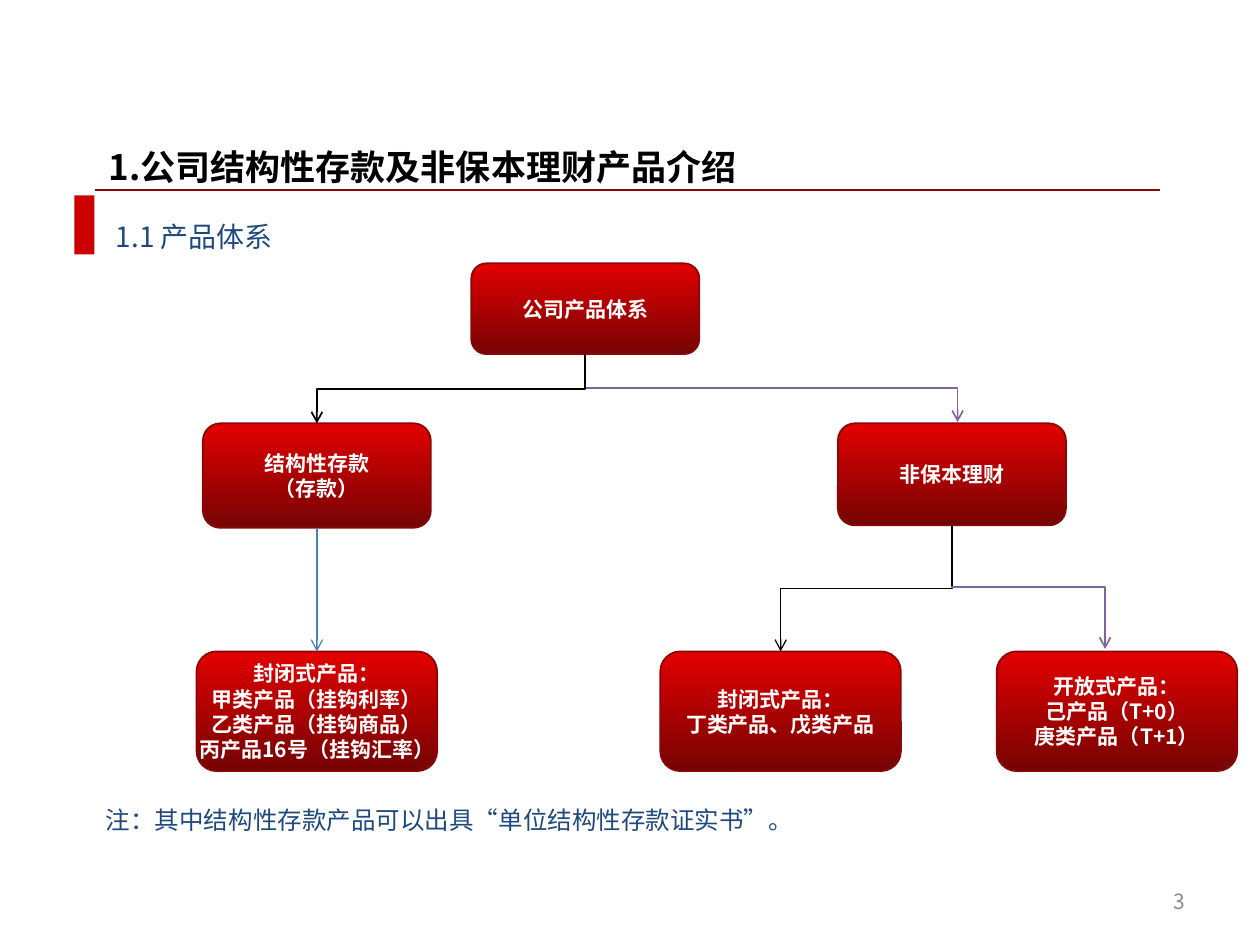
from lxml.etree import SubElement
from pptx import Presentation
from pptx.dml.color import RGBColor
from pptx.enum.shapes import MSO_CONNECTOR as LINK, MSO_SHAPE as SHAPE
from pptx.enum.text import MSO_ANCHOR as ANCHOR, PP_ALIGN as ALIGN
from pptx.oxml.ns import qn
from pptx.util import Inches, Pt

FONT = "Noto Sans CJK SC"
BLACK, WHITE, GREY = "000000", "FFFFFF", "8C8C8C"
NAVY, PURPLE, BLUE = "1F497D", "8064A2", "4B7EBC"
RED, DARK_RED = "CC0000", "880808"
BOX_GRADIENT = ("E30000", "760303")
BOTTOM, TOP = 2, 0
ROW_TOPS = (2.09, 3.36, 5.17)
NODE_WIDTH, LEAF_WIDTH, LEAF_HEIGHT = 1.81, 1.91, 0.95


def color(value):
    return RGBColor.from_string(value)


def place(shape, left, top, width, height):
    shape.left, shape.top = Inches(left), Inches(top)
    shape.width, shape.height = Inches(width), Inches(height)


def write(shape, text, size=12, ink=BLACK, bold=False, align=ALIGN.LEFT,
          anchor=ANCHOR.TOP, wrap=True):
    """Fill a shape with one paragraph for each line of text."""
    frame = shape.text_frame
    frame.word_wrap, frame.vertical_anchor = wrap, anchor
    frame.margin_left = frame.margin_right = Inches(0.09)
    frame.margin_top = frame.margin_bottom = Inches(0.04)
    frame.text = text
    for paragraph in frame.paragraphs:
        paragraph.alignment = align
        font = paragraph.runs[0].font
        font.name, font.size, font.bold = FONT, Pt(size), bold
        font.color.rgb = color(ink)
        SubElement(font._element, qn("a:ea")).set("typeface", FONT)


def add_text(slide, text, left, top, width, height, **style):
    area = [Inches(v) for v in (left, top, width, height)]
    write(slide.shapes.add_textbox(*area), text, **style)


def add_box(slide, text, left, row, width, height):
    area = [Inches(v) for v in (left, ROW_TOPS[row], width, height)]
    box = slide.shapes.add_shape(SHAPE.ROUNDED_RECTANGLE, *area)
    box.shadow.inherit = False
    box.fill.gradient()
    box.fill.gradient_angle = 270
    for stop, shade, position in zip(box.fill.gradient_stops, BOX_GRADIENT, (0, 1)):
        stop.color.rgb, stop.position = color(shade), position
    box.line.color.rgb, box.line.width = color(DARK_RED), Pt(1)
    write(box, text, ink=WHITE, bold=True, align=ALIGN.CENTER,
          anchor=ANCHOR.MIDDLE, wrap=False)
    return box


def style_line(shape, ink, width, arrow=True):
    shape.line.color.rgb, shape.line.width = color(ink), Pt(width)
    if arrow:
        SubElement(shape.line._get_or_add_ln(), qn("a:tailEnd")).set("type", "arrow")
    SubElement(shape._element.spPr, qn("a:effectLst"))


def link(slide, parent, child, ink, width, kind=LINK.STRAIGHT):
    """Join the bottom of parent to the top of child."""
    connector = slide.shapes.add_connector(kind, 0, 0, 0, 0)
    connector.begin_connect(parent, BOTTOM)
    connector.end_connect(child, TOP)
    style_line(connector, ink, width)
    return connector


def link_down_left(slide, parent, child, ink, width):
    """Elbow that leaves downwards: its frame is turned by a quarter."""
    elbow = link(slide, parent, child, ink, width, LINK.ELBOW)
    spread, drop = elbow.width, elbow.height
    center_x, center_y = elbow.left + spread // 2, elbow.top + drop // 2
    elbow.left, elbow.top = center_x - drop // 2, center_y - spread // 2
    elbow.width, elbow.height = drop, spread
    xfrm = elbow._element.spPr.find(qn("a:xfrm"))
    xfrm.attrib.pop("flipH", None)
    xfrm.set("rot", str(90 * 60000))


def branch_right(slide, left, top, right, bottom):
    """Arrow that runs right and then down."""
    builder = slide.shapes.build_freeform(Inches(left), Inches(top))
    corners = [(right, top), (right, bottom)]
    builder.add_line_segments([(Inches(x), Inches(y)) for x, y in corners], close=False)
    arrow = builder.convert_to_shape()
    arrow.fill.background()
    style_line(arrow, PURPLE, 1)


def add_header(slide):
    title = slide.shapes.title
    place(title, 0.77, 1.1, 8.73, 0.45)
    write(title, "1.公司结构性存款及非保本理财产品介绍", size=20, bold=True,
          anchor=ANCHOR.MIDDLE)
    rule = slide.shapes.add_connector(LINK.STRAIGHT, Inches(0.75), Inches(1.51),
                                      Inches(9.21), Inches(1.51))
    style_line(rule, DARK_RED, 1, arrow=False)
    marker = slide.shapes.add_shape(SHAPE.RECTANGLE, Inches(0.59), Inches(1.55),
                                    Inches(0.16), Inches(0.47))
    marker.shadow.inherit = False
    marker.fill.solid()
    marker.fill.fore_color.rgb = color(RED)
    marker.line.fill.background()
    add_text(slide, "1.1 产品体系", 0.83, 1.7, 4.35, 0.45, size=16, ink=NAVY)


def add_product_tree(slide):
    system = add_box(slide, "公司产品体系", 3.74, 0, NODE_WIDTH, 0.72)
    deposit = add_box(slide, "结构性存款\n（存款）", 1.61, 1, NODE_WIDTH, 0.83)
    wealth = add_box(slide, "非保本理财", 6.65, 1, NODE_WIDTH, 0.81)
    leaves = [
        (1.56, "封闭式产品：\n甲类产品（挂钩利率）\n乙类产品（挂钩商品）\n丙产品16号（挂钩汇率）"),
        (5.24, "封闭式产品：\n丁类产品、戊类产品"),
        (7.91, "开放式产品：\n己产品（T+0）\n庚类产品（T+1）"),
    ]
    linked, closed, _ = [add_box(slide, text, left, 2, LEAF_WIDTH, LEAF_HEIGHT)
                         for left, text in leaves]
    link_down_left(slide, system, deposit, BLACK, 1)
    link_down_left(slide, wealth, closed, BLACK, 0.75)
    link(slide, deposit, linked, BLUE, 0.75)
    branch_right(slide, 4.65, 3.08, 7.6, 3.35)
    branch_right(slide, 7.55, 4.66, 8.77, 5.15)


def main():
    deck = Presentation()
    deck.slide_width, deck.slide_height = Inches(10), Inches(7.5)
    slide = deck.slides.add_slide(deck.slide_layouts[5])
    add_header(slide)
    add_product_tree(slide)
    add_text(slide, "注：其中结构性存款产品可以出具“单位结构性存款证实书”。",
             0.75, 6.35, 8.96, 0.45, size=14, ink=NAVY)
    add_text(slide, "3", 7.17, 6.95, 2.33, 0.4, ink=GREY, align=ALIGN.RIGHT,
             anchor=ANCHOR.MIDDLE)
    deck.save("out.pptx")


if __name__ == "__main__":
    main()
